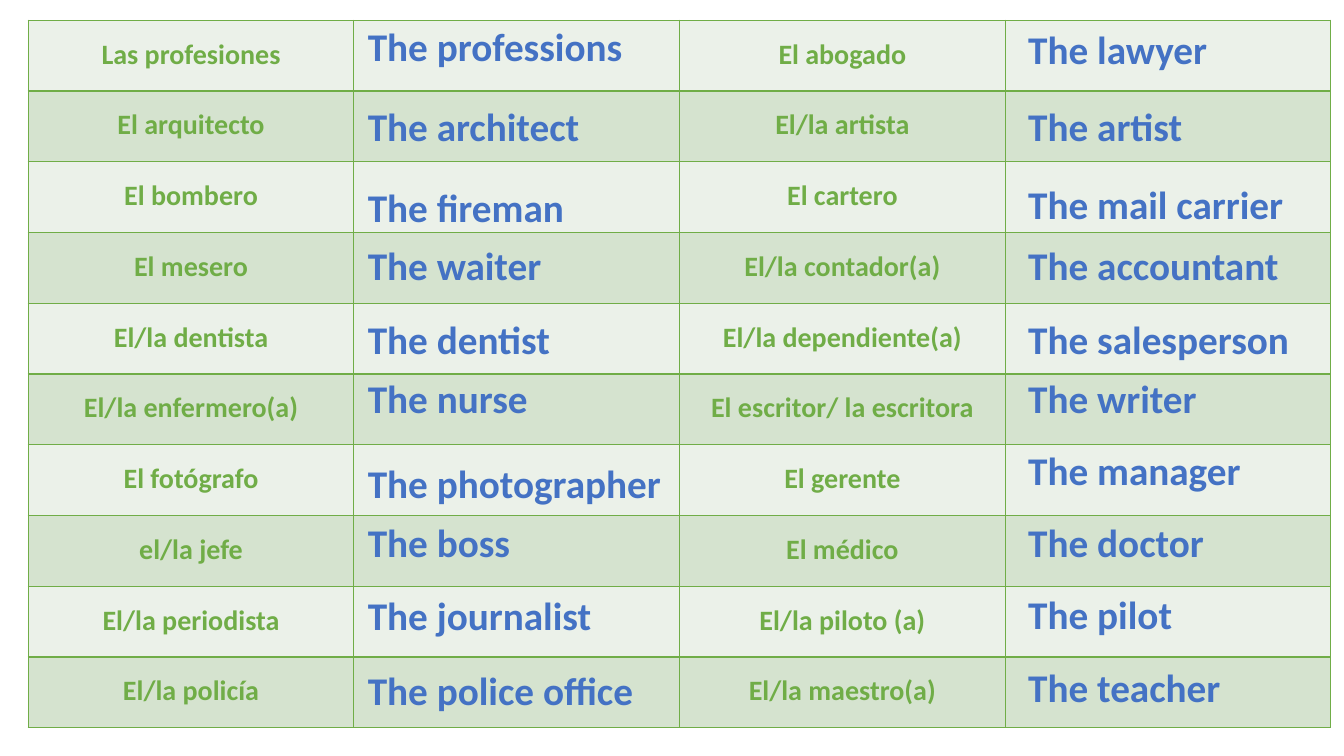
from lxml import etree
from pptx import Presentation
from pptx.dml.color import RGBColor
from pptx.enum.text import MSO_ANCHOR, MSO_AUTO_SIZE, PP_ALIGN
from pptx.oxml.ns import qn
from pptx.util import Inches, Pt

CENTER, LEFT = PP_ALIGN.CENTER, PP_ALIGN.LEFT
TOP = MSO_ANCHOR.TOP
GROW = MSO_AUTO_SIZE.SHAPE_TO_FIT_TEXT

GREEN = RGBColor(0x70, 0xAD, 0x47)
BLUE = RGBColor(0x44, 0x72, 0xC4)
PALE = RGBColor(0xEB, 0xF1, 0xE9)
SAGE = RGBColor(0xD5, 0xE3, 0xCF)
FONT = "Calibri"

# Spanish words, one pair per table row
SPANISH = [
    ("Las profesiones", "El abogado"),
    ("El arquitecto", "El/la artista"),
    ("El bombero", "El cartero"),
    ("El mesero", "El/la contador(a)"),
    ("El/la dentista", "El/la dependiente(a)"),
    ("El/la enfermero(a)", "El escritor/ la escritora"),
    ("El fotógrafo", "El gerente"),
    ("el/la jefe", "El médico"),
    ("El/la periodista", "El/la piloto (a)"),
    ("El/la policía", "El/la maestro(a)"),
]

# English answers with their top edges
LEFT_WORDS = [
    ("The professions", 0.17), ("The architect", 0.97),
    ("The fireman", 1.77), ("The waiter", 2.34),
    ("The dentist", 3.08), ("The nurse", 3.66),
    ("The photographer", 4.51), ("The boss", 5.09),
    ("The journalist", 5.82), ("The police office", 6.56),
]
RIGHT_WORDS = [
    ("The lawyer", 0.2), ("The artist", 0.97),
    ("The mail carrier", 1.74), ("The accountant", 2.34),
    ("The salesperson", 3.08), ("The writer", 3.66),
    ("The manager", 4.38), ("The doctor", 5.09),
    ("The pilot", 5.81), ("The teacher", 6.53),
]


def write(frame, text, size, color, align):
    para = frame.paragraphs[0]
    para.alignment = align
    run = para.add_run()
    run.text = text
    font = run.font
    font.name, font.size, font.bold = FONT, Pt(size), True
    font.color.rgb = color
    return para


def edge(cell, color):
    """Draw a thin line on all four sides of a cell."""
    props = cell._tc.get_or_add_tcPr()
    for side in ("lnL", "lnR", "lnT", "lnB"):
        line = etree.SubElement(props, qn("a:" + side), w=str(Pt(1)))
        fill = etree.SubElement(line, qn("a:solidFill"))
        etree.SubElement(fill, qn("a:srgbClr"), val=str(color))


def add_grid(slide, left, top, width, height):
    rows, cols = len(SPANISH), 4
    table = slide.shapes.add_table(
        rows, cols, Inches(left), Inches(top), Inches(width), Inches(height)
    ).table
    table.first_row = table.horz_banding = False
    for r, pair in enumerate(SPANISH):
        for c in range(cols):
            cell = table.cell(r, c)
            edge(cell, GREEN)
            cell.fill.solid()
            cell.fill.fore_color.rgb = SAGE if r % 2 else PALE
            cell.margin_left = cell.margin_right = Inches(0.07)
            cell.margin_top = cell.margin_bottom = 0
            cell.vertical_anchor = TOP
            # Spanish fills every other column
            if c % 2 == 0:
                para = write(cell.text_frame, pair[c // 2], 20, GREEN, CENTER)
                para.line_spacing = 1.5


def add_words(slide, left, width, words):
    for text, top in words:
        box = slide.shapes.add_textbox(
            Inches(left), Inches(top), Inches(width), Inches(0.57))
        frame = box.text_frame
        frame.word_wrap = True
        frame.auto_size = GROW
        write(frame, text, 28, BLUE, LEFT)


def main():
    deck = Presentation()
    deck.slide_width, deck.slide_height = Inches(13.33), Inches(7.5)
    slide = deck.slides.add_slide(deck.slide_layouts[6])
    add_grid(slide, 0.28, 0.2, 12.92, 7.02)
    add_words(slide, 3.55, 3.24, LEFT_WORDS)
    add_words(slide, 10.1, 3.23, RIGHT_WORDS)
    deck.save("out.pptx")


if __name__ == "__main__":
    main()
